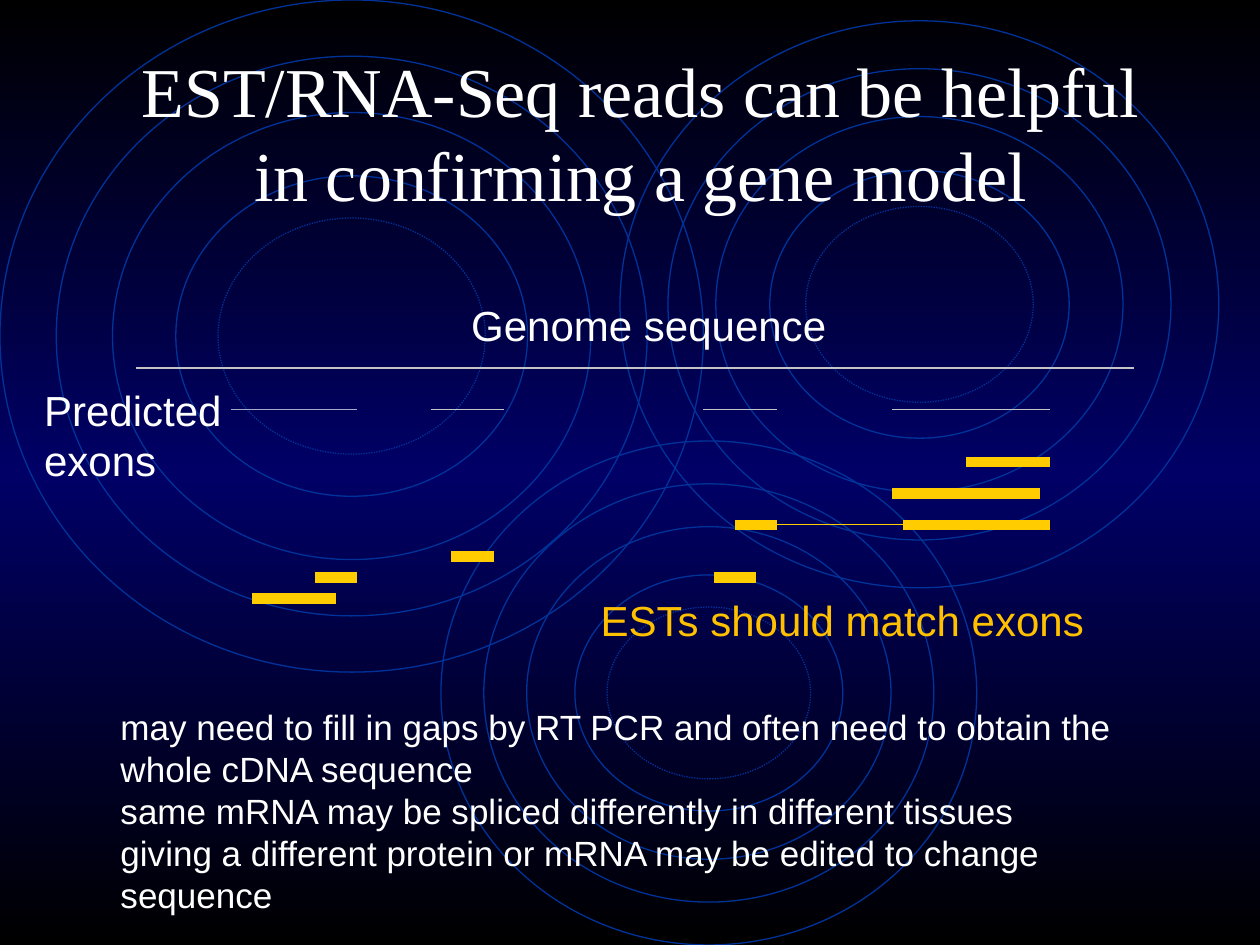
from copy import deepcopy

from lxml.etree import SubElement
from pptx import Presentation
from pptx.dml.color import RGBColor
from pptx.enum.dml import MSO_LINE_DASH_STYLE as Dash
from pptx.enum.shapes import MSO_CONNECTOR as Connector, MSO_SHAPE as Shape
from pptx.enum.text import MSO_ANCHOR as Anchor, MSO_AUTO_SIZE as AutoSize, PP_ALIGN as Align
from pptx.oxml.ns import qn
from pptx.util import Cm, Pt

COLORS = {
    "black": "000000",
    "navy": "000066",
    "ring": "003399",
    "white": "FFFFFF",
    "genome": "C4C4C4",
    "first_exon": "A5A9C6",
    "est": "FFCC00",
    "est_label": "FFC000",
}
RING_INSETS = (0, 0.08, 0.16, 0.25, 0.31)
RING_CENTERS = ((0, 0, 14.18, 13.55), (8.89, 8.89, 10.8, 10.16), (12.5, 0.42, 12.07, 11.43))
EXON_Y = 8.26
EXONS = (
    (4.66, 7.2, "first_exon"),
    (8.68, 10.16, "genome"),
    (14.18, 15.66, "genome"),
    (17.99, 21.17, "genome"),
)
SPLICED_Y = 10.58
ESTS = (
    (19.47, 21.17, 9.31),
    (17.99, 20.96, 9.95),
    (18.2, 21.17, SPLICED_Y),
    (14.82, 15.66, SPLICED_Y),
    (9.1, 9.95, 11.22),
    (6.35, 7.2, 11.64),
    (14.39, 15.24, 11.64),
    (5.08, 6.77, 12.07),
)


class SlideBuilder:
    def __init__(self, slide):
        self.slide = slide

    def color(self, name):
        return RGBColor.from_string(COLORS[name])

    def background(self, *names):
        fill = self.slide.background.fill
        fill.gradient()
        fill.gradient_angle = 270
        stop_list = self.slide.element.find(".//" + qn("a:gsLst"))
        stop_list.append(deepcopy(stop_list[-1]))
        for index, (stop, name) in enumerate(zip(fill.gradient_stops, names)):
            stop.color.rgb = self.color(name)
            stop.position = index / (len(names) - 1)

    def rings(self, left, top, width, height):
        for fraction in RING_INSETS:
            inset = fraction * width
            ring = self.slide.shapes.add_shape(
                Shape.OVAL, Cm(left + inset), Cm(top + inset),
                Cm(width - 2 * inset), Cm(height - 2 * inset))
            ring.shadow.inherit = False
            ring.fill.background()
            ring.line.color.rgb = self.color("ring")
            ring.line.width = Pt(0.75)
            if fraction == RING_INSETS[-1]:
                ring.line.dash_style = Dash.ROUND_DOT

    def track(self, start, end, y, color, weight=0.75):
        track = self.slide.shapes.add_connector(
            Connector.STRAIGHT, Cm(start), Cm(y), Cm(end), Cm(y))
        track.line.color.rgb = self.color(color)
        track.line.width = Pt(weight)
        SubElement(track.element.spPr, qn("a:effectLst"))

    def text(self, words, box, size, color="white", font="Arial", wrap=False,
             align=Align.LEFT, anchor=Anchor.TOP, auto_size=AutoSize.SHAPE_TO_FIT_TEXT):
        frame = self.slide.shapes.add_textbox(*map(Cm, box)).text_frame
        frame.text = words
        frame.word_wrap = wrap
        frame.auto_size = auto_size
        frame.vertical_anchor = anchor
        for paragraph in frame.paragraphs:
            paragraph.alignment = align
            for run in paragraph.runs:
                run.font.name = font
                run.font.size = Pt(size)
                run.font.color.rgb = self.color(color)


def main():
    deck = Presentation()
    deck.slide_width, deck.slide_height = Cm(25.4), Cm(19.05)
    builder = SlideBuilder(deck.slides.add_slide(deck.slide_layouts[6]))
    builder.background("black", "navy", "black")
    for bounds in RING_CENTERS:
        builder.rings(*bounds)

    builder.text("EST/RNA-Seq reads can be helpful in confirming a gene model",
                 (2.12, 1.06, 21.59, 3.18), 40, font="Times New Roman", wrap=True,
                 align=Align.CENTER, anchor=Anchor.MIDDLE, auto_size=AutoSize.NONE)
    builder.text("Genome sequence", (9.25, 5.92, 7.98, 1.28), 24)
    for start, end, color in EXONS:
        builder.track(start, end, EXON_Y, color)
    builder.text("Predicted\nexons", (0.64, 7.62, 4.37, 2.39), 24)
    for start, end, y in ESTS:
        builder.track(start, end, y, "est", 6)
    builder.track(15.66, 18.42, SPLICED_Y, "est")
    builder.text("ESTs should match exons", (11.86, 11.86, 10.34, 1.28), 24, "est_label")
    builder.text("may need to fill in gaps by RT PCR and often need to obtain the "
                 "whole cDNA sequence\n"
                 "same mRNA may be spliced differently in different tissues giving a "
                 "different protein or mRNA may be edited to change sequence",
                 (2.18, 14.1, 20.52, 3.68), 20, wrap=True)
    builder.track(2.74, 22.86, 7.42, "genome")
    deck.save("out.pptx")


if __name__ == "__main__":
    main()
